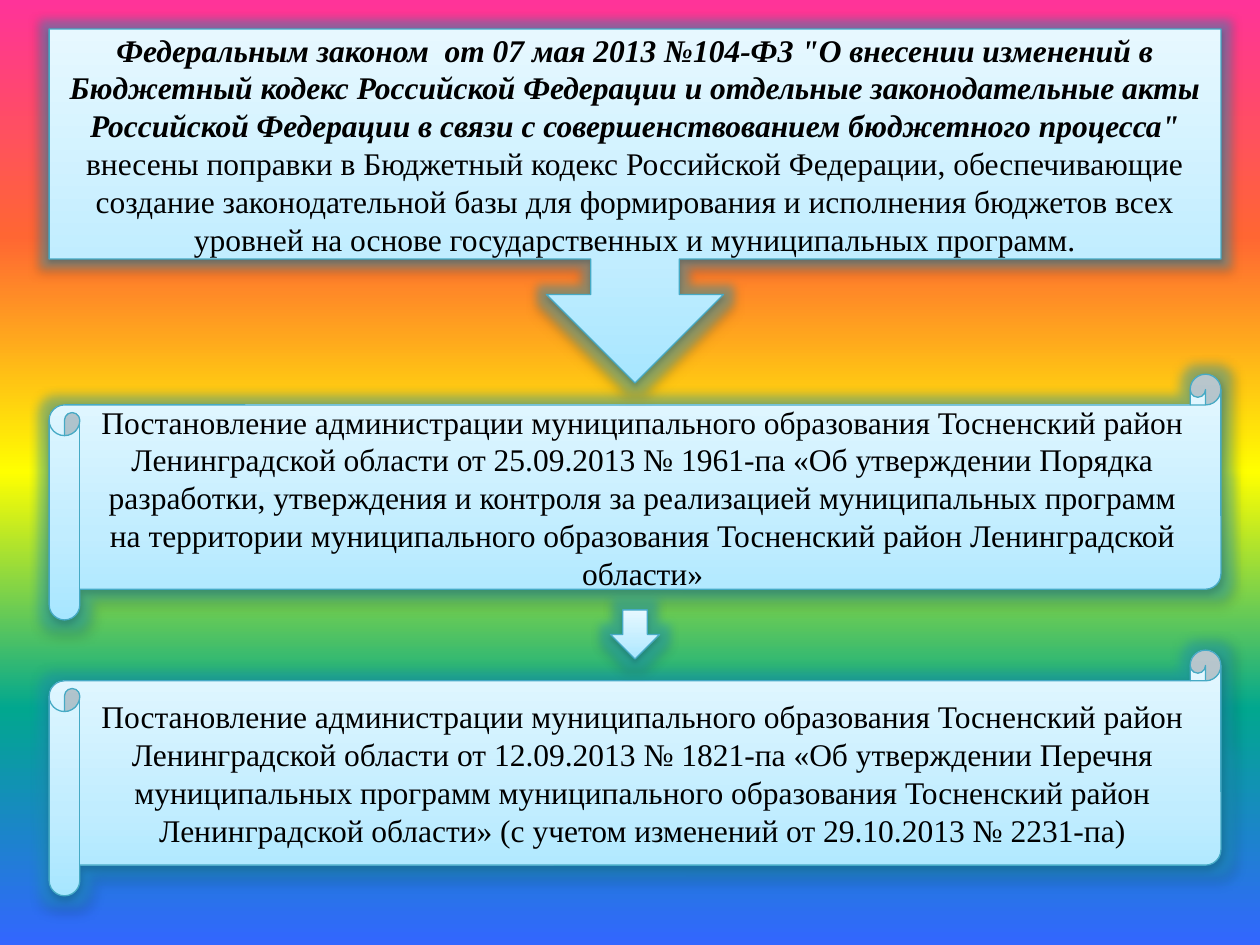
from lxml.etree import SubElement
from pptx import Presentation
from pptx.dml.color import RGBColor
from pptx.enum.shapes import MSO_SHAPE
from pptx.enum.text import MSO_ANCHOR, PP_ALIGN
from pptx.oxml.ns import qn
from pptx.util import Inches, Pt

BLACK = RGBColor(0x00, 0x00, 0x00)
TEAL = RGBColor(0x46, 0xAA, 0xC5)
GLOW = RGBColor(0x21, 0xA5, 0xCE)
ICE = [(0, RGBColor(0xA7, 0xE6, 0xFF)), (35, RGBColor(0xC1, 0xED, 0xFF)),
       (100, RGBColor(0xE7, 0xF8, 0xFF))]
RAINBOW = [(0, RGBColor(0xFF, 0x33, 0x99)), (25, RGBColor(0xFF, 0x66, 0x33)),
           (50, RGBColor(0xFF, 0xFF, 0x00)), (75, RGBColor(0x01, 0xA7, 0x8F)),
           (100, RGBColor(0x33, 0x66, 0xFF))]

LEFT, WIDTH = 0.39, 9.3
ARROW_SIZE = 0.39

LAW_TITLE = ('Федеральным законом  от 07 мая 2013 №104-ФЗ "О внесении изменений в Бюджетный '
             'кодекс Российской Федерации и отдельные законодательные акты Российской Федерации '
             'в связи с совершенствованием бюджетного процесса" ')
LAW_EFFECT = ('внесены поправки в Бюджетный кодекс Российской Федерации, обеспечивающие создание '
              'законодательной базы для формирования и исполнения бюджетов всех уровней на основе '
              'государственных и муниципальных программ.')
PROCEDURE_DECREE = (
    'Постановление администрации муниципального образования Тосненский район Ленинградской '
    'области от 25.09.2013 № 1961-па «Об утверждении Порядка разработки, утверждения и контроля '
    'за реализацией муниципальных программ на территории муниципального образования Тосненский '
    'район Ленинградской области»')
LIST_DECREE = (
    'Постановление администрации муниципального образования Тосненский район Ленинградской '
    'области от 12.09.2013 № 1821-па «Об утверждении Перечня муниципальных программ '
    'муниципального образования Тосненский район Ленинградской области» (с учетом изменений от '
    '29.10.2013 № 2231-па)')


def add_color(parent, color, alpha=None):
    node = SubElement(parent, qn("a:srgbClr"), val=str(color))
    if alpha is not None:
        SubElement(node, qn("a:alpha"), val=str(alpha * 1000))


class SlideBuilder:
    """Holds the current slide and the shared text and shape style."""

    font_name = "Times New Roman"
    font_size = Pt(18)

    def __init__(self, slide):
        self.slide = slide

    def gradient(self, fill, owner, stops, angle):
        """Fill with any number of stops; the angle runs counter-clockwise."""
        fill.gradient()
        fill.gradient_angle = angle
        stop_list = owner.element.find(".//" + qn("a:gsLst"))
        for stop in list(stop_list):
            stop_list.remove(stop)
        for position, color in stops:
            add_color(SubElement(stop_list, qn("a:gs"), pos=str(position * 1000)), color)

    def background(self, stops):
        self.gradient(self.slide.background.fill, self.slide, stops, 270)

    def effects(self, shape):
        """Give the shape a soft teal glow and a small shadow below."""
        shape.shadow.inherit = False
        effect_list = shape.element.spPr.find(qn("a:effectLst"))
        add_color(SubElement(effect_list, qn("a:glow"), rad=str(Pt(11))), GLOW, 40)
        shadow = SubElement(effect_list, qn("a:outerShdw"), blurRad=str(Pt(3.1)),
                            dist=str(Pt(1.6)), dir="5400000", rotWithShape="0")
        add_color(shadow, BLACK, 38)

    def shape(self, kind, left, top, width, height):
        shape = self.slide.shapes.add_shape(
            kind, Inches(left), Inches(top), Inches(width), Inches(height))
        self.gradient(shape.fill, shape, ICE, 90)
        shape.line.color.rgb = TEAL
        shape.line.width = Pt(0.75)
        self.effects(shape)
        return shape

    def panel(self, kind, top, height, *spans):
        """Add a full-width shape with text; each span is (text, emphasised)."""
        box = self.shape(kind, LEFT, top, WIDTH, height)
        frame = box.text_frame
        frame.word_wrap = True
        frame.vertical_anchor = MSO_ANCHOR.MIDDLE
        para = frame.paragraphs[0]
        para.alignment = PP_ALIGN.CENTER
        para.font.name = self.font_name
        para.font.size = self.font_size
        para.font.color.rgb = BLACK
        for text, emphasised in spans:
            span = para.add_run()
            span.text = text
            span.font.bold = span.font.italic = emphasised


def main():
    deck = Presentation()
    deck.slide_width, deck.slide_height = Inches(10), Inches(7.5)
    page = SlideBuilder(deck.slides.add_slide(deck.slide_layouts[6]))
    page.background(RAINBOW)
    for top, decree in ((2.97, PROCEDURE_DECREE), (5.16, LIST_DECREE)):
        page.panel(MSO_SHAPE.HORIZONTAL_SCROLL, top, 1.95, (decree, False))
    page.panel(MSO_SHAPE.DOWN_ARROW_CALLOUT, 0.23, 2.81,
               (LAW_TITLE, True), (LAW_EFFECT, False))
    page.shape(MSO_SHAPE.DOWN_ARROW, LEFT + (WIDTH - ARROW_SIZE) / 2, 4.84,
               ARROW_SIZE, ARROW_SIZE)
    deck.save("out.pptx")


if __name__ == "__main__":
    main()
